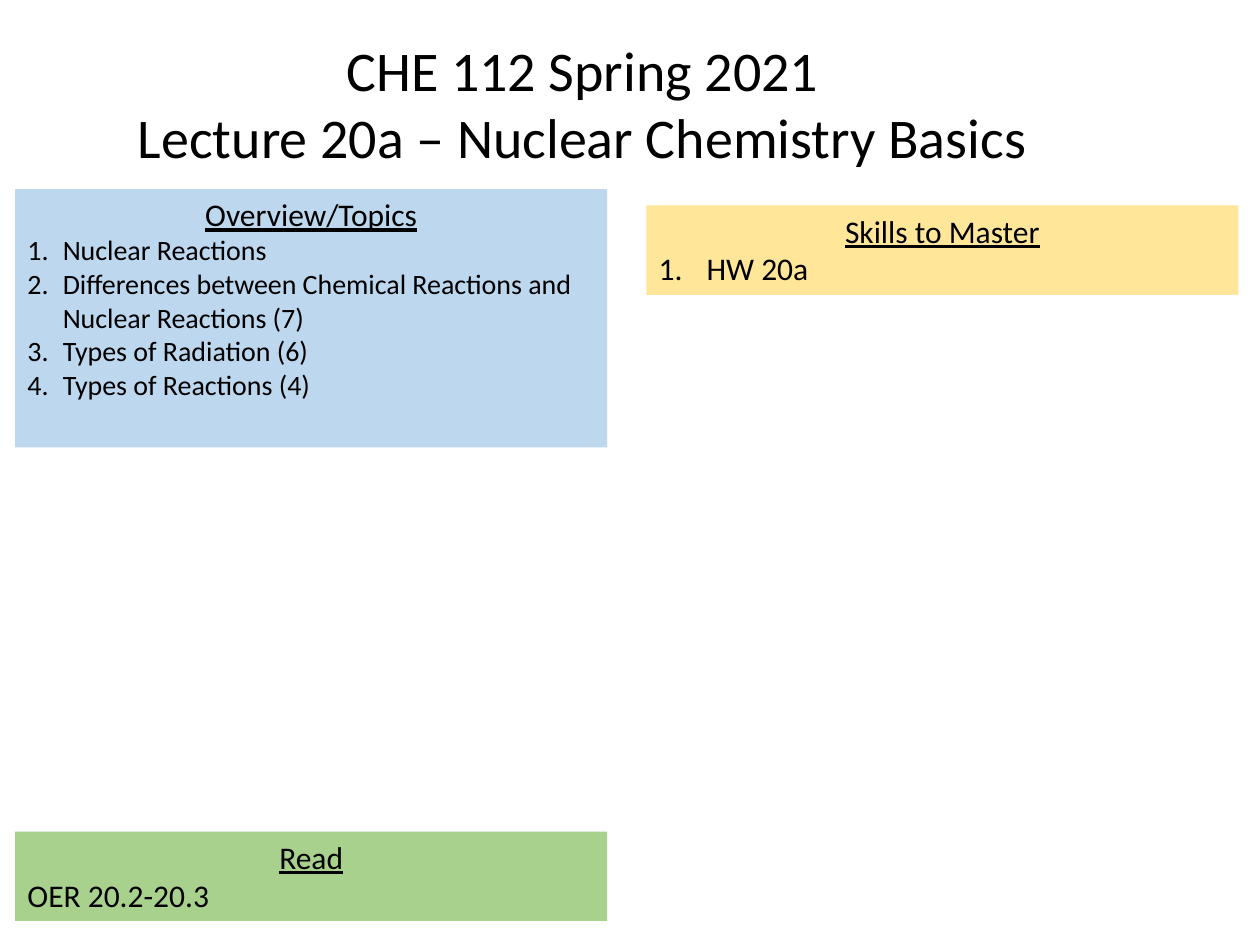
from lxml import etree
from pptx import Presentation
from pptx.dml.color import RGBColor
from pptx.enum.text import PP_ALIGN
from pptx.oxml.ns import qn
from pptx.util import Inches, Pt

LEFT, CENTER = PP_ALIGN.LEFT, PP_ALIGN.CENTER
FONT = "Calibri"
BLACK = RGBColor(0x00, 0x00, 0x00)
BLUE = RGBColor(0xBD, 0xD7, 0xEE)
GOLD = RGBColor(0xFF, 0xE6, 0x99)
GREEN = RGBColor(0xA9, 0xD1, 0x8E)

TITLE = ["CHE 112 Spring 2021", "Lecture 20a – Nuclear Chemistry Basics"]
COL_A, COL_B, WIDTH = 0.12, 5.13, 4.7

# A panel with an indent has a numbered list.
PANELS = [
    dict(head="Overview/Topics", left=COL_A, top=1.5, height=2.05,
         fill=BLUE, size=16, indent=0.28,
         lines=["Nuclear Reactions",
                "Differences between Chemical Reactions and "
                "Nuclear Reactions (7)",
                "Types of Radiation (6)",
                "Types of Reactions (4)"]),
    dict(head="Skills to Master", left=COL_B, top=1.63, height=0.71,
         fill=GOLD, size=18, indent=0.38, lines=["HW 20a"]),
    dict(head="Read", left=COL_A, top=6.6, height=0.71,
         fill=GREEN, size=18, indent=0, lines=["OER 20.2-20.3"]),
]


def add_box(slide, left, top, width, height, wrap=True):
    box = slide.shapes.add_textbox(
        Inches(left), Inches(top), Inches(width), Inches(height))
    box.text_frame.word_wrap = wrap
    return box


def add_line(frame, text, size, align=LEFT, under=False):
    """Fill the empty first paragraph, or add one below the last."""
    para = frame.paragraphs[0]
    if para.runs:
        para = frame.add_paragraph()
    para.alignment = align
    run = para.add_run()
    run.text = text
    font = run.font
    font.name, font.size, font.underline = FONT, Pt(size), under
    font.color.rgb = BLACK
    return para


def number(para, indent):
    props = para._p.get_or_add_pPr()
    props.set("marL", str(Inches(indent)))
    props.set("indent", str(-Inches(indent)))
    etree.SubElement(props, qn("a:buFont"), typeface="+mj-lt")
    etree.SubElement(props, qn("a:buAutoNum"), type="arabicPeriod")


def add_panel(slide, panel):
    box = add_box(slide, panel["left"], panel["top"], WIDTH, panel["height"])
    box.fill.solid()
    box.fill.fore_color.rgb = panel["fill"]
    frame = box.text_frame
    add_line(frame, panel["head"], 18, CENTER, under=True)
    for text in panel["lines"]:
        para = add_line(frame, text, panel["size"])
        if panel["indent"]:
            number(para, panel["indent"])


def main():
    deck = Presentation()
    deck.slide_width, deck.slide_height = Inches(10), Inches(7.5)
    slide = deck.slides.add_slide(deck.slide_layouts[6])
    for panel in PANELS:
        add_panel(slide, panel)
    title = add_box(slide, 0.96, 0.23, 7.33, 1.18, wrap=False)
    for text in TITLE:
        add_line(title.text_frame, text, 32, CENTER)
    deck.save("out.pptx")


if __name__ == "__main__":
    main()
